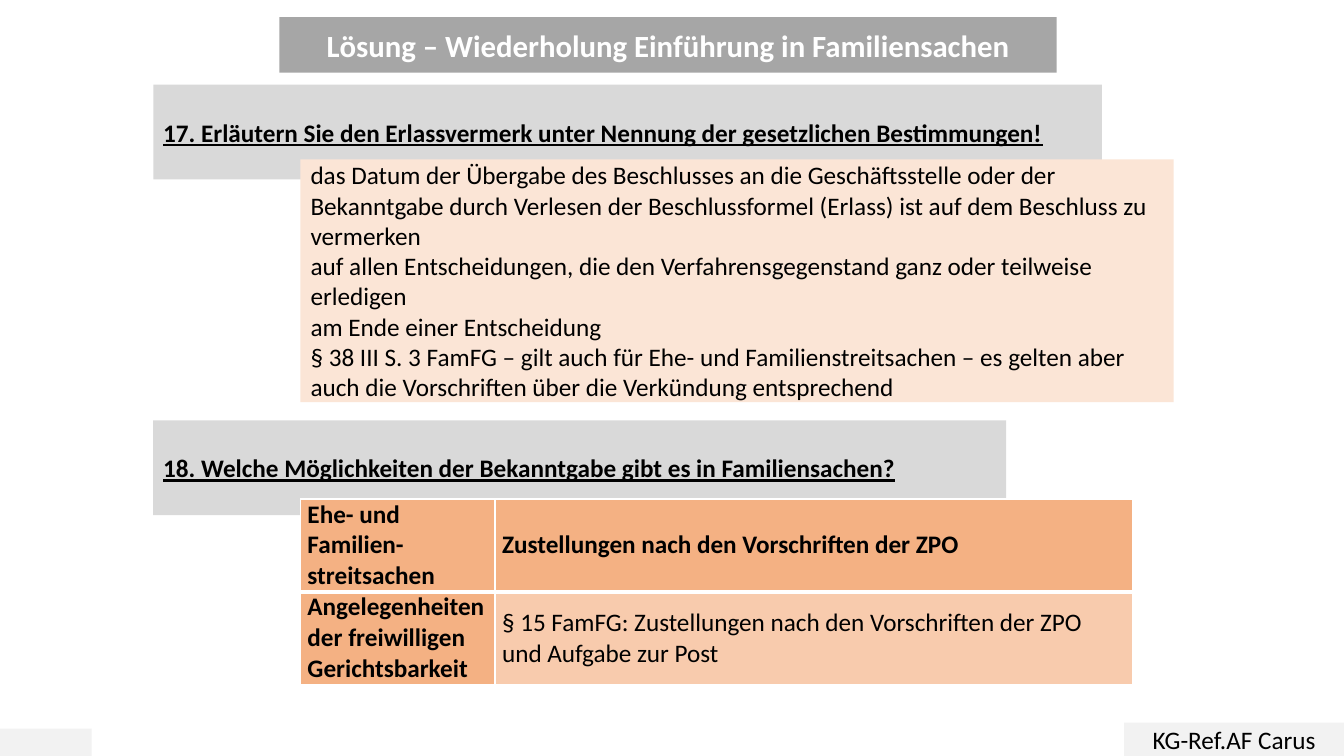
from lxml.etree import SubElement
from pptx import Presentation
from pptx.dml.color import RGBColor
from pptx.enum.shapes import MSO_SHAPE
from pptx.enum.text import MSO_ANCHOR, MSO_AUTO_SIZE, PP_ALIGN
from pptx.oxml.ns import qn
from pptx.util import Inches, Pt

TITLE = "Lösung – Wiederholung Einführung in Familiensachen"
QUESTIONS = [
    ("17. Erläutern Sie den Erlassvermerk unter Nennung der gesetzlichen Bestimmungen!", 0.84, 9.41),
    ("18. Welche Möglichkeiten der Bekanntgabe gibt es in Familiensachen?", 4.17, 8.46),
]
ANSWERS = [
    "das Datum der Übergabe des Beschlusses an die Geschäftsstelle oder der Bekanntgabe durch Verlesen der Beschlussformel (Erlass) ist auf dem Beschluss zu vermerken",
    "auf allen Entscheidungen, die den Verfahrensgegenstand ganz oder teilweise erledigen",
    "am Ende einer Entscheidung",
    "§ 38 III S. 3 FamFG – gilt auch für Ehe- und Familienstreitsachen – es gelten aber auch die Vorschriften über die Verkündung entsprechend",
]
ROWS = [
    ("Ehe- und Familien-streitsachen", "Zustellungen nach den Vorschriften der ZPO"),
    ("Angelegenheiten der freiwilligen Gerichtsbarkeit",
     "§ 15 FamFG: Zustellungen nach den Vorschriften der ZPO und Aufgabe zur Post"),
]
FOOTER = "KG-Ref.AF Carus"

W, H = 13.33, 7.5
QUESTION_X, ANSWER_X = 1.52, 2.98
QUESTION_H, ROW_H = 0.94, 0.92
COLS = (1.93, 6.32)
TABLE_Y = 4.95


def rgb(color):
    return RGBColor.from_string(color)


def fill(obj, color):
    obj.fill.solid()
    obj.fill.fore_color.rgb = rgb(color)


def place(sp, x, y, w, h):
    sp.left, sp.top, sp.width, sp.height = (Inches(v) for v in (x, y, w, h))


def write(tf, lines, size=18, color="000000", bold=False, underline=False, align=PP_ALIGN.LEFT):
    tf.text = "\n".join(lines)
    tf.word_wrap = True
    tf.vertical_anchor = MSO_ANCHOR.MIDDLE
    for p in tf.paragraphs:
        p.alignment = align
        p.space_before = Pt(0)
        for r in p.runs:
            r.font.name = "Calibri"
            r.font.size = Pt(size)
            r.font.bold = bold
            r.font.underline = underline
            r.font.color.rgb = rgb(color)


def add_box(x, y, w, h, color):
    sp = slide.shapes.add_shape(MSO_SHAPE.RECTANGLE, Inches(x), Inches(y), Inches(w), Inches(h))
    sp.shadow.inherit = False
    sp.line.fill.background()
    fill(sp, color)
    return sp


def add_border(cell, side, width):
    ln = SubElement(cell._tc.get_or_add_tcPr(), qn("a:" + side), w=str(Pt(width)))
    SubElement(SubElement(ln, qn("a:solidFill")), qn("a:srgbClr"), val="FFFFFF")


prs = Presentation()
prs.slide_width, prs.slide_height = Inches(W), Inches(H)
slide = prs.slides.add_slide(prs.slide_layouts[1])

title = slide.shapes.title
place(title, 2.77, 0.17, 7.71, 0.55)
geom = SubElement(title._element.spPr, qn("a:prstGeom"), prst="roundRect")
SubElement(geom, qn("a:avLst"))
fill(title, "A6A6A6")
write(title.text_frame, [TITLE], 22, "FFFFFF", bold=True, align=PP_ALIGN.CENTER)
title.text_frame.auto_size = MSO_AUTO_SIZE.NONE

for text, y, w in QUESTIONS:
    sp = add_box(QUESTION_X, y, w, QUESTION_H, "D9D9D9")
    write(sp.text_frame, [text], bold=True, underline=True)

add_box(0, H - 0.27, 0.91, 0.27, "F2F2F2")
footer = add_box(W - 2.18, H - 0.33, 2.18, 0.33, "F2F2F2")
write(footer.text_frame, [FOOTER], align=PP_ALIGN.CENTER)

body = slide.placeholders[1]
place(body, ANSWER_X, 1.58, 8.66, 2.41)
fill(body, "FBE5D6")
write(body.text_frame, ANSWERS)
body.text_frame.auto_size = MSO_AUTO_SIZE.NONE
for p in body.text_frame.paragraphs:
    pPr = p._p.get_or_add_pPr()
    pPr.set("marL", "0")
    pPr.set("indent", "0")
    SubElement(pPr, qn("a:buNone"))
slide.shapes._spTree.append(body._element)

frame = slide.shapes.add_table(len(ROWS), len(COLS), Inches(ANSWER_X), Inches(TABLE_Y),
                               Inches(sum(COLS)), Inches(ROW_H * len(ROWS)))
table = frame.table
for col, w in zip(table.columns, COLS):
    col.width = Inches(w)
for i, row in enumerate(ROWS):
    table.rows[i].height = Inches(ROW_H)
    for j, text in enumerate(row):
        cell = table.cell(i, j)
        heading = i == 0 or j == 0
        write(cell.text_frame, [text], bold=heading)
        cell.vertical_anchor = MSO_ANCHOR.MIDDLE
        cell.margin_left = cell.margin_right = Inches(0.07)
        cell.margin_top = cell.margin_bottom = 0
        for side in ("lnL", "lnR", "lnT", "lnB"):
            add_border(cell, side, 3 if (i, side) in ((0, "lnB"), (1, "lnT")) else 1)
        fill(cell, "F4B183" if heading else "F8CBAD")

prs.save("out.pptx")
